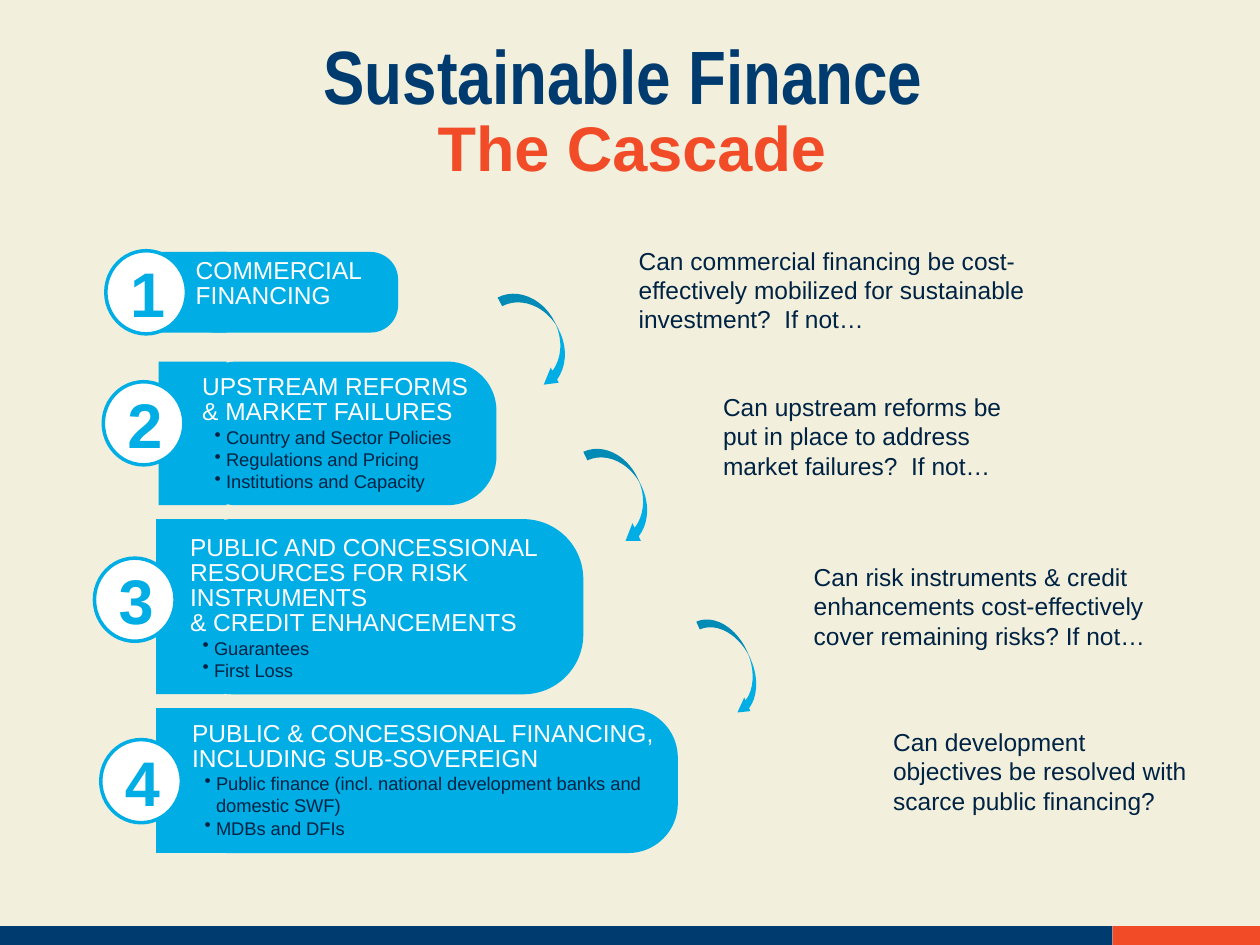
from dataclasses import dataclass
from typing import Optional

from lxml import etree
from pptx import Presentation
from pptx.dml.color import RGBColor
from pptx.enum.shapes import MSO_SHAPE
from pptx.enum.text import MSO_ANCHOR, MSO_AUTO_SIZE, PP_ALIGN
from pptx.oxml.ns import qn
from pptx.util import Inches, Pt

RECT = MSO_SHAPE.RECTANGLE
ROUND = MSO_SHAPE.ROUNDED_RECTANGLE
OVAL = MSO_SHAPE.OVAL
ARROW = MSO_SHAPE.CURVED_LEFT_ARROW
TOP, MIDDLE, BOTTOM = MSO_ANCHOR.TOP, MSO_ANCHOR.MIDDLE, MSO_ANCHOR.BOTTOM
LEFT, CENTER = PP_ALIGN.LEFT, PP_ALIGN.CENTER
NO_FIT = MSO_AUTO_SIZE.NONE
TITLE_ONLY = 5


@dataclass(frozen=True)
class Theme:
    paper: str = "F2EFDC"
    navy: str = "003B6F"
    orange: str = "F14B27"
    blue: str = "00ADE4"
    ink: str = "002344"
    white: str = "FFFFFF"
    font: str = "Arial"
    narrow: str = "Arial Narrow"
    title: float = 43.2
    display: float = 36
    text: float = 14
    bullet: float = 10.5
    tight: float = 0.85


@dataclass(frozen=True)
class Box:
    col: float
    row: float
    cols: float
    rows: float


@dataclass(frozen=True)
class Arrow:
    box: Box
    angle: float
    head: float


@dataclass(frozen=True)
class Step:
    badge: tuple[float, float]
    tab: float
    card: Box
    heads: list[str]
    bullets: list[str]
    ask: Box
    question: list[str]
    arrow: Optional[Arrow] = None


T = Theme()
COLS, ROWS = 100, 75
TAB_COLS = 5.4
BADGE_COLS, BADGE_ROWS = 6.4, 6.6
CORNER = 0.342

STEPS = [
    Step((8.4, 19.9), 12.6, Box(14.9, 20, 16.7, 6.4),
         ["COMMERCIAL FINANCING"], [],
         Box(49.7, 19, 34.5, 8.1),
         ["Can commercial financing be cost-effectively mobilized for "
          "sustainable investment?  If not…"],
         Arrow(Box(41.3, 22.4, 3.1, 8.5), 332.1, 0.437)),
    Step((8.2, 30.3), 12.6, Box(14.9, 28.7, 24.5, 11.4),
         ["UPSTREAM REFORMS", "& MARKET FAILURES"],
         ["Country and Sector Policies", "Regulations and Pricing",
          "Institutions and Capacity"],
         Box(56.4, 30.6, 26.3, 8.1),
         ["Can upstream reforms be put in place to address market failures?"
          "  If not…"],
         Arrow(Box(48, 34.8, 3, 8.6), 334.6, 0.519)),
    Step((7.5, 44.3), 12.4, Box(13.7, 41.2, 32.6, 13.9),
         ["PUBLIC AND CONCESSIONAL", "RESOURCES FOR RISK INSTRUMENTS",
          "& CREDIT ENHANCEMENTS"],
         ["Guarantees", "First Loss"],
         Box(63.6, 44.1, 32.8, 8.1),
         ["Can risk instruments & credit", "enhancements cost-effectively",
          "cover remaining risks? If not…"],
         Arrow(Box(56.9, 48.4, 2.7, 8.5), 335.6, 0.437)),
    Step((8, 58.7), 12.4, Box(14.1, 56.2, 39.7, 11.5),
         ["PUBLIC & CONCESSIONAL FINANCING,", "INCLUDING SUB-SOVEREIGN"],
         ["Public finance (incl. national development banks and domestic SWF)",
          "MDBs and DFIs"],
         Box(69.9, 57.2, 25.4, 8.1),
         ["Can development objectives be resolved with scarce public "
          "financing?"]),
]

prs = Presentation()
prs.slide_width, prs.slide_height = Inches(10), Inches(7.5)
s = prs.slides.add_slide(prs.slide_layouts[TITLE_ONLY])


def place(box: Box) -> tuple[int, int, int, int]:
    w, h = prs.slide_width / COLS, prs.slide_height / ROWS
    return (round(box.col * w), round(box.row * h),
            round(box.cols * w), round(box.rows * h))


def rgb(color: str) -> RGBColor:
    return RGBColor.from_string(color)


def frame(sp, anchor=TOP, insets=None):
    tf = sp.text_frame
    tf.word_wrap = True
    tf.auto_size = NO_FIT
    tf.vertical_anchor = anchor
    if insets:
        (tf.margin_left, tf.margin_top,
         tf.margin_right, tf.margin_bottom) = map(Inches, insets)
    return tf


def write(p, text: str, size=T.text, color=T.ink, font=T.font,
          bold=False, align=LEFT, spacing=None, bullet=False) -> None:
    p.alignment = align
    if spacing:
        p.line_spacing = spacing
    if bullet:
        p.level = 1
        pPr = p._p.get_or_add_pPr()
        pPr.set("marL", str(Inches(0.19)))
        pPr.set("indent", str(Inches(-0.09)))
        etree.SubElement(pPr, qn("a:buChar")).set("char", "•")
    r = p.add_run()
    r.text = text
    f = r.font
    f.name, f.size, f.bold = font, Pt(size), bold
    f.color.rgb = rgb(color)


def write_lines(tf, lines: list[str], **fmt) -> None:
    for line in lines:
        p = tf.paragraphs[0]
        write(tf.add_paragraph() if p.runs else p, line, **fmt)


def shape(kind, box: Box, fill: str, line: Optional[str] = None):
    sp = s.shapes.add_shape(kind, *place(box))
    sp.shadow.inherit = False
    sp.fill.solid()
    sp.fill.fore_color.rgb = rgb(fill)
    if line:
        sp.line.color.rgb = rgb(line)
        sp.line.width = Pt(2)
    else:
        sp.line.fill.background()
    return sp


def draw_card(step: Step) -> None:
    c = step.card
    shape(RECT, Box(step.tab, c.row, TAB_COLS, c.rows), T.blue)
    sp = shape(ROUND, c, T.blue)
    sp.adjustments[0] = CORNER
    tf = frame(sp, insets=(0, 0, 0, 0.05))
    write_lines(tf, step.heads, color=T.white, spacing=T.tight)
    write_lines(tf, step.bullets, size=T.bullet, bullet=True)


def draw_badge(number: int, step: Step) -> None:
    sp = shape(OVAL, Box(*step.badge, BADGE_COLS, BADGE_ROWS), T.white, T.blue)
    write_lines(frame(sp, MIDDLE), [str(number)], size=T.display,
                color=T.blue, bold=True, align=CENTER)


def draw_arrow(arrow: Arrow) -> None:
    sp = shape(ARROW, arrow.box, T.blue)
    sp.rotation = arrow.angle
    for i, value in enumerate((0.25, arrow.head, 0.364)):
        sp.adjustments[i] = value


def draw_title() -> None:
    sp = s.shapes.title
    sp.left, sp.top, sp.width, sp.height = place(Box(3.9, 3, 92.5, 11.6))
    p = frame(sp, BOTTOM, (0, 0, 0, 0)).paragraphs[0]
    fmt = dict(bold=True, align=CENTER, spacing=T.tight)
    write(p, "Sustainable Finance ", size=T.title, color=T.navy,
          font=T.narrow, **fmt)
    p.add_line_break()
    write(p, "The Cascade", size=T.display, color=T.orange, **fmt)


def main() -> None:
    bg = s.background.fill
    bg.solid()
    bg.fore_color.rgb = rgb(T.paper)
    draw_title()
    shape(RECT, Box(0, 73.5, 88.3, 1.5), T.navy)
    shape(RECT, Box(88.3, 73.5, 11.7, 1.5), T.orange)
    for number, step in enumerate(STEPS, 1):
        draw_card(step)
        draw_badge(number, step)
        if step.arrow:
            draw_arrow(step.arrow)
        write_lines(frame(s.shapes.add_textbox(*place(step.ask))),
                    step.question)
    prs.save("out.pptx")


if __name__ == "__main__":
    main()
